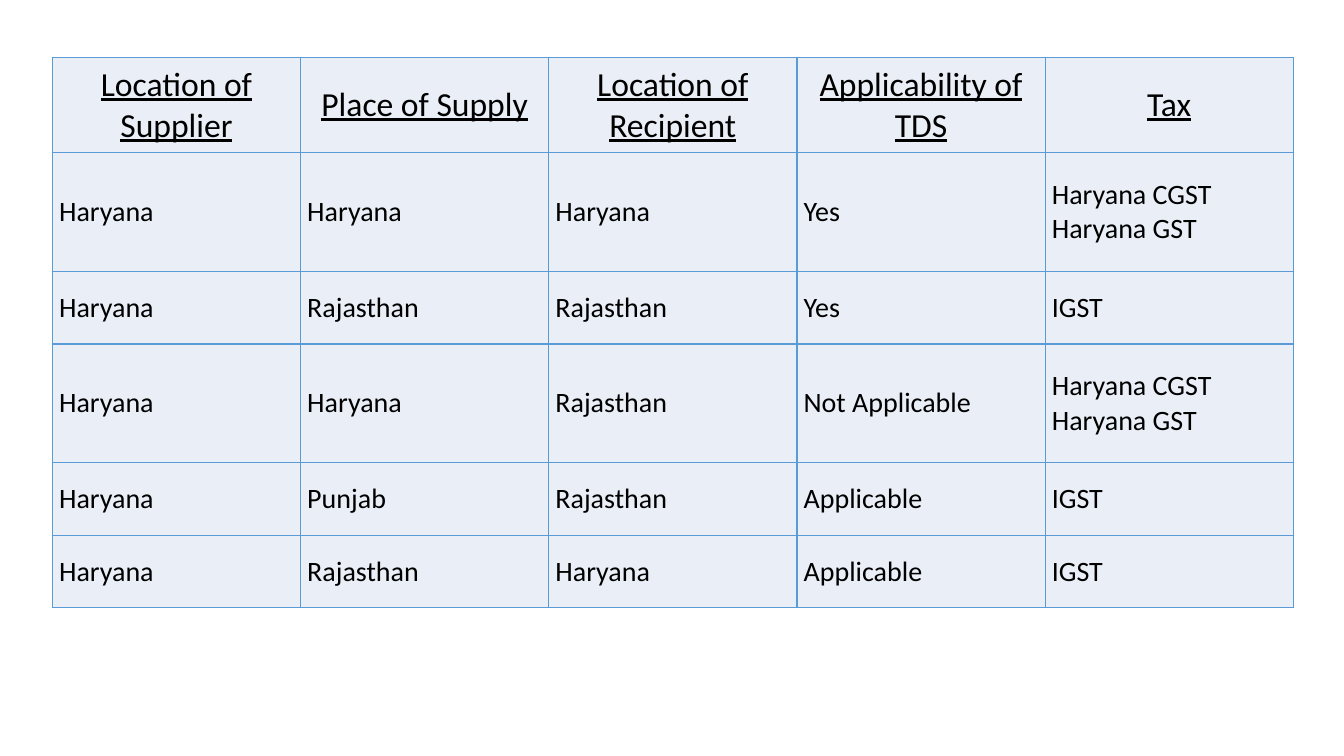
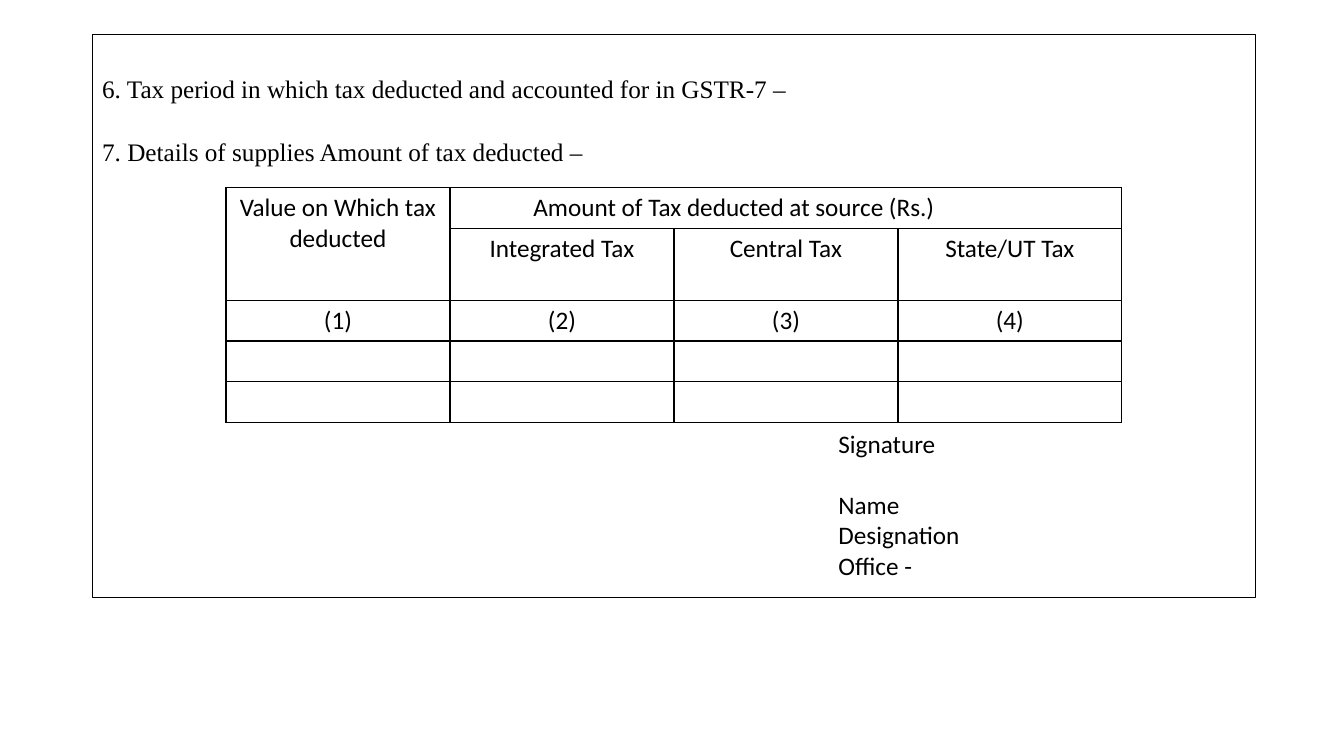
from lxml import etree
from pptx import Presentation
from pptx import util as u
from pptx.dml import color
from pptx.enum import shapes, text
from pptx.oxml import ns

Pt = u.Pt
INK = "000000"
BLUE = "5B9BD5"
PALE = "EAEFF7"
LEFT, MID = text.PP_ALIGN.LEFT, text.PP_ALIGN.CENTER


def style(para, size, face="Calibri", align=LEFT, under=False):
    para.alignment = align
    font = para.font
    font.name, font.size = face, Pt(size)
    font.bold, font.underline = False, under
    font.color.rgb = color.RGBColor.from_string(INK)


def grid(slide, left, top, width, highs, rows, edge, fill=None):
    cols = len(rows[0])
    frame = slide.shapes.add_table(len(rows), cols, Pt(left), Pt(top),
                                   Pt(width * cols), Pt(sum(highs)))
    table = frame.table
    table.first_row = table.horz_banding = False
    for col in table.columns:
        col.width = Pt(width)
    for row, high, words in zip(table.rows, highs, rows):
        row.height = Pt(high)
        for cell, word in zip(row.cells, words):
            cell.text = word
            if fill:
                cell.fill.solid()
                cell.fill.fore_color.rgb = color.RGBColor.from_string(fill)
            else:
                cell.fill.background()
            props = cell._tc.get_or_add_tcPr()
            for spot, side in enumerate(("lnL", "lnR", "lnT", "lnB")):
                line = etree.Element(ns.qn("a:" + side), w=str(Pt(1)))
                paint = etree.SubElement(line, ns.qn("a:solidFill"))
                etree.SubElement(paint, ns.qn("a:srgbClr"), val=edge)
                props.insert(spot, line)
    return table


deck = Presentation()
deck.slide_width, deck.slide_height = Pt(960), Pt(540)
blank = deck.slide_layouts[6]

slide = deck.slides.add_slide(blank)
rows = [
    ("Location of Supplier", "Place of Supply", "Location of Recipient",
     "Applicability of TDS", "Tax"),
    ("Haryana", "Haryana", "Haryana", "Yes", "Haryana CGST\nHaryana GST"),
    ("Haryana", "Rajasthan", "Rajasthan", "Yes", "IGST"),
    ("Haryana", "Haryana", "Rajasthan", "Not Applicable",
     "Haryana CGST\nHaryana GST"),
    ("Haryana", "Punjab", "Rajasthan", "Applicable", "IGST"),
    ("Haryana", "Rajasthan", "Haryana", "Applicable", "IGST"),
]
highs = [68.2, 84.8, 51.8, 84.8, 51.8, 51.8]
table = grid(slide, 37.4, 41, 177.3, highs, rows, BLUE, PALE)
for index, row in enumerate(table.rows):
    for cell in row.cells:
        cell.vertical_anchor = text.MSO_ANCHOR.MIDDLE
        cell.margin_left = cell.margin_right = Pt(4.8)
        cell.margin_top = cell.margin_bottom = Pt(4.8)
        for para in cell.text_frame.paragraphs:
            if index == 0:
                style(para, 24, align=MID, under=True)
            else:
                style(para, 20)

slide = deck.slides.add_slide(blank)
form = slide.shapes.add_shape(shapes.MSO_SHAPE.RECTANGLE, Pt(65.9), Pt(24.5),
                              Pt(830.9), Pt(402.5))
form.shadow.inherit = False
form.fill.background()
form.line.color.rgb = color.RGBColor.from_string(INK)
form.line.width = Pt(0.75)
body = form.text_frame
body.word_wrap = True
body.vertical_anchor = text.MSO_ANCHOR.TOP
body.margin_top = Pt(28)
body.text = ("6. Tax period in which tax deducted and accounted for in GSTR-7 –\n"
             "7. Details of supplies Amount of tax deducted –")
for para in body.paragraphs:
    style(para, 18, "Times New Roman")
body.paragraphs[1].space_before = Pt(22.9)

rows = [
    ("Value on Which tax deducted", "Amount of Tax deducted at source (Rs.)",
     "", ""),
    ("", "Integrated Tax", "Central Tax", "State/UT Tax"),
    ("(1)", "(2)", "(3)", "(4)"),
    ("",) * 4,
    ("",) * 4,
]
highs = [29.2, 50, 29.2, 29.2, 29.2]
table = grid(slide, 161.4, 134, 160, highs, rows, INK)
table.cell(0, 0).merge(table.cell(1, 0))
table.cell(0, 1).merge(table.cell(0, 3))
table.cell(0, 1).margin_right = Pt(81.4)
for cell in table.iter_cells():
    style(cell.text_frame.paragraphs[0], 18, align=MID)

sign = slide.shapes.add_textbox(Pt(591.8), Pt(302.4), Pt(209.5), Pt(116.6))
body = sign.text_frame
body.word_wrap = True
body.text = "Signature\nName\nDesignation\nOffice -"
for para in body.paragraphs:
    style(para, 18)
body.paragraphs[1].space_before = Pt(22)

deck.save("out.pptx")
